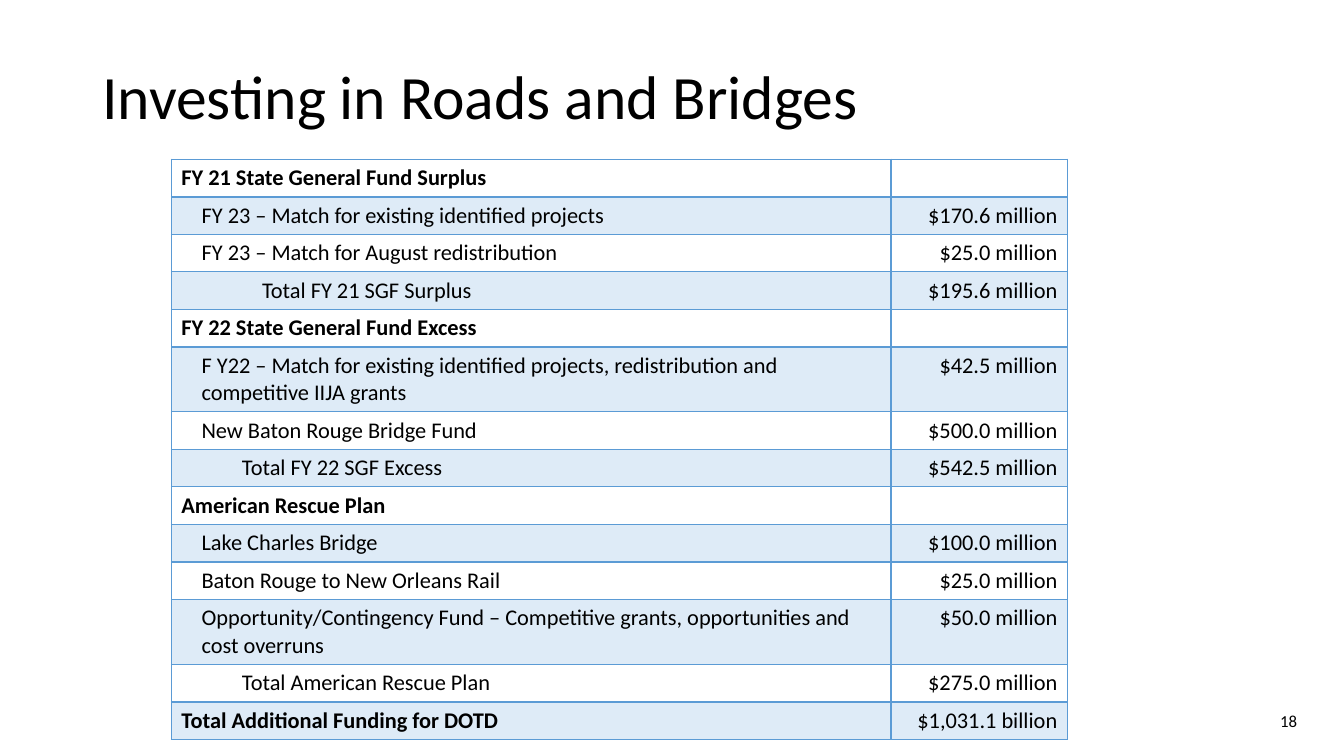
from lxml.etree import SubElement
from pptx import Presentation
from pptx.dml.color import RGBColor
from pptx.enum.text import MSO_ANCHOR, PP_ALIGN
from pptx.oxml.ns import qn
from pptx.util import Emu, Pt

COLORS = {"text": "000000", "border": "5B9BD5", "band": "DEEBF7"}
COLUMNS, ROWS = 160, 90
INDENTS = {"heading": 0, "item": 2.4, "total": 7.2, "deep total": 9.6}
FUNDING = [
    ("heading", "FY 21 State General Fund Surplus", ""),
    ("item", "FY 23 – Match for existing identified projects", "$170.6 million"),
    ("item", "FY 23 – Match for August redistribution", "$25.0 million"),
    ("deep total", "Total FY 21 SGF Surplus", "$195.6 million"),
    ("heading", "FY 22 State General Fund Excess", ""),
    ("item", "F Y22 – Match for existing identified projects, redistribution and "
             "competitive IIJA grants", "$42.5 million"),
    ("item", "New Baton Rouge Bridge Fund", "$500.0 million"),
    ("total", "Total FY 22 SGF Excess", "$542.5 million"),
    ("heading", "American Rescue Plan", ""),
    ("item", "Lake Charles Bridge", "$100.0 million"),
    ("item", "Baton Rouge to New Orleans Rail", "$25.0 million"),
    ("item", "Opportunity/Contingency Fund – Competitive grants, opportunities and "
             "cost overruns", "$50.0 million"),
    ("total", "Total American Rescue Plan", "$275.0 million"),
    ("heading", "Total Additional Funding for DOTD", "$1,031.1 billion"),
]


class FundingSlide:
    """Draws styled elements on one slide, measured in grid columns and rows."""

    def __init__(self, deck, font="Calibri"):
        self.column = deck.slide_width / COLUMNS
        self.row = deck.slide_height / ROWS
        self.font = font
        self.slide = deck.slides.add_slide(deck.slide_layouts[6])

    def place(self, left, top, width, height):
        return (Emu(round(left * self.column)), Emu(round(top * self.row)),
                Emu(round(width * self.column)), Emu(round(height * self.row)))

    def fill_text(self, frame, text, size, bold=False, align=PP_ALIGN.LEFT):
        frame.text = text
        paragraph = frame.paragraphs[0]
        paragraph.alignment = align
        for run in paragraph.runs:
            run.font.name = self.font
            run.font.size = Pt(size)
            run.font.bold = bold
            run.font.color.rgb = RGBColor.from_string(COLORS["text"])
        return paragraph

    def text(self, area, text, size, align=PP_ALIGN.LEFT, spacing=1.0):
        frame = self.slide.shapes.add_textbox(*self.place(*area)).text_frame
        frame.word_wrap = True
        frame.vertical_anchor = MSO_ANCHOR.MIDDLE
        self.fill_text(frame, text, size, align=align).line_spacing = spacing

    def borders(self, cell, top, bottom):
        properties = cell._tc.get_or_add_tcPr()
        edges = (("a:lnL", 1), ("a:lnR", 1), ("a:lnT", top), ("a:lnB", bottom))
        for position, (edge, points) in enumerate(edges):
            line = SubElement(properties, qn(edge), w=str(Pt(points)))
            fill = SubElement(line, qn("a:solidFill"))
            SubElement(fill, qn("a:srgbClr"), val=COLORS["border"])
            properties.insert(position, line)

    def table(self, left, top, widths, line_height, wrapped_height, entries, size=16):
        heights = [wrapped_height if len(label) > 75 else line_height
                   for _, label, _ in entries]
        area = self.place(left, top, sum(widths), sum(heights))
        table = self.slide.shapes.add_table(len(entries), len(widths), *area).table
        for column, width in zip(table.columns, widths):
            column.width = Emu(round(width * self.column))
        for index, (level, label, amount) in enumerate(entries):
            table.rows[index].height = Emu(round(heights[index] * self.row))
            label_cell, amount_cell = table.cell(index, 0), table.cell(index, 1)
            paragraph = self.fill_text(label_cell.text_frame, label, size, level == "heading")
            indent = round(INDENTS[level] * self.column)
            paragraph._p.get_or_add_pPr().set("marL", str(indent))
            paragraph = self.fill_text(amount_cell.text_frame, amount, size,
                                       align=PP_ALIGN.RIGHT)
            if not amount:
                SubElement(paragraph._p, qn("a:endParaRPr"), sz=str(size * 100))
            for cell in (label_cell, amount_cell):
                if index % 2:
                    cell.fill.solid()
                    cell.fill.fore_color.rgb = RGBColor.from_string(COLORS["band"])
                else:
                    cell.fill.background()
                self.borders(cell, 2 if index == 1 else 1, 2 if index == 0 else 1)


def main():
    deck = Presentation()
    deck.slide_width, deck.slide_height = Emu(12192000), Emu(6858000)
    page = FundingSlide(deck)
    page.text((11, 3.1, 138, 17.4), "Investing in Roads and Bridges", 44, spacing=0.9)
    page.text((119.6, 83.4, 36, 4.8), "18", 12, PP_ALIGN.RIGHT)
    page.table(20.4, 18.96, (85.68, 21), 4.47, 7.72, FUNDING)
    deck.save("out.pptx")


if __name__ == "__main__":
    main()
